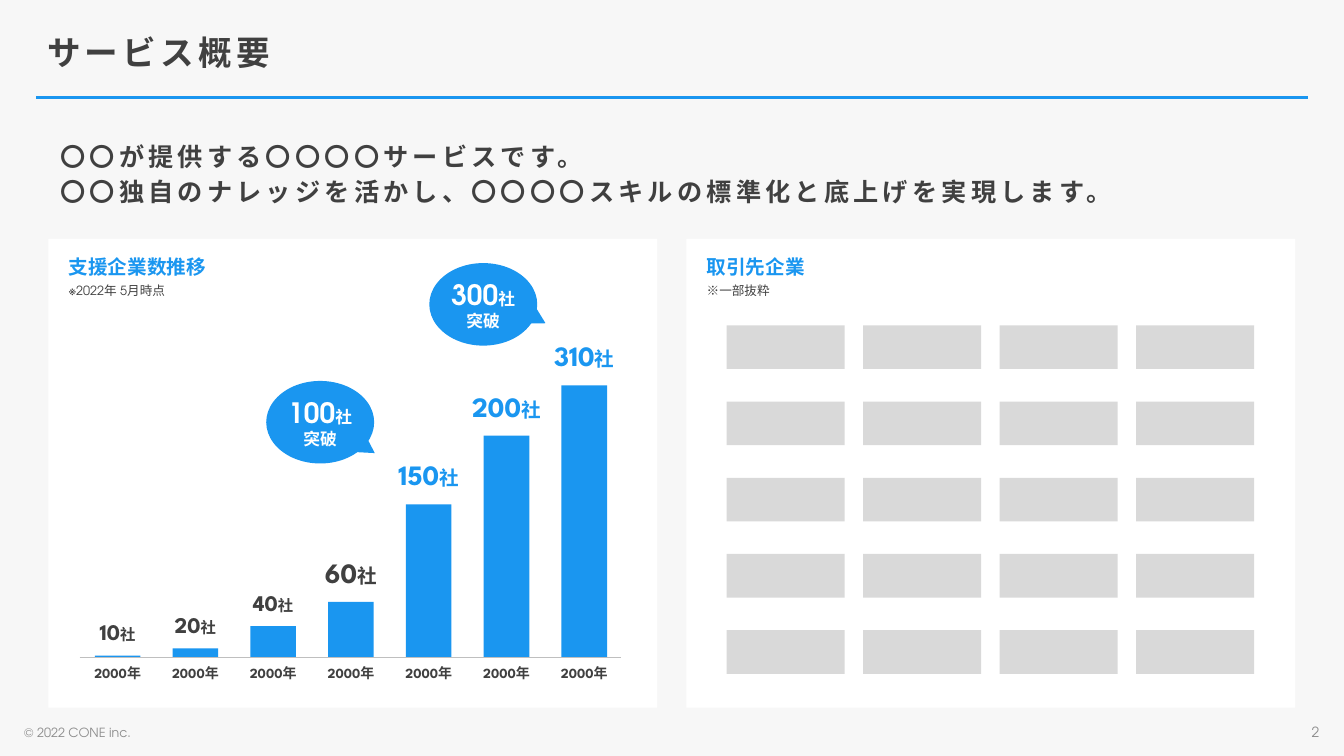
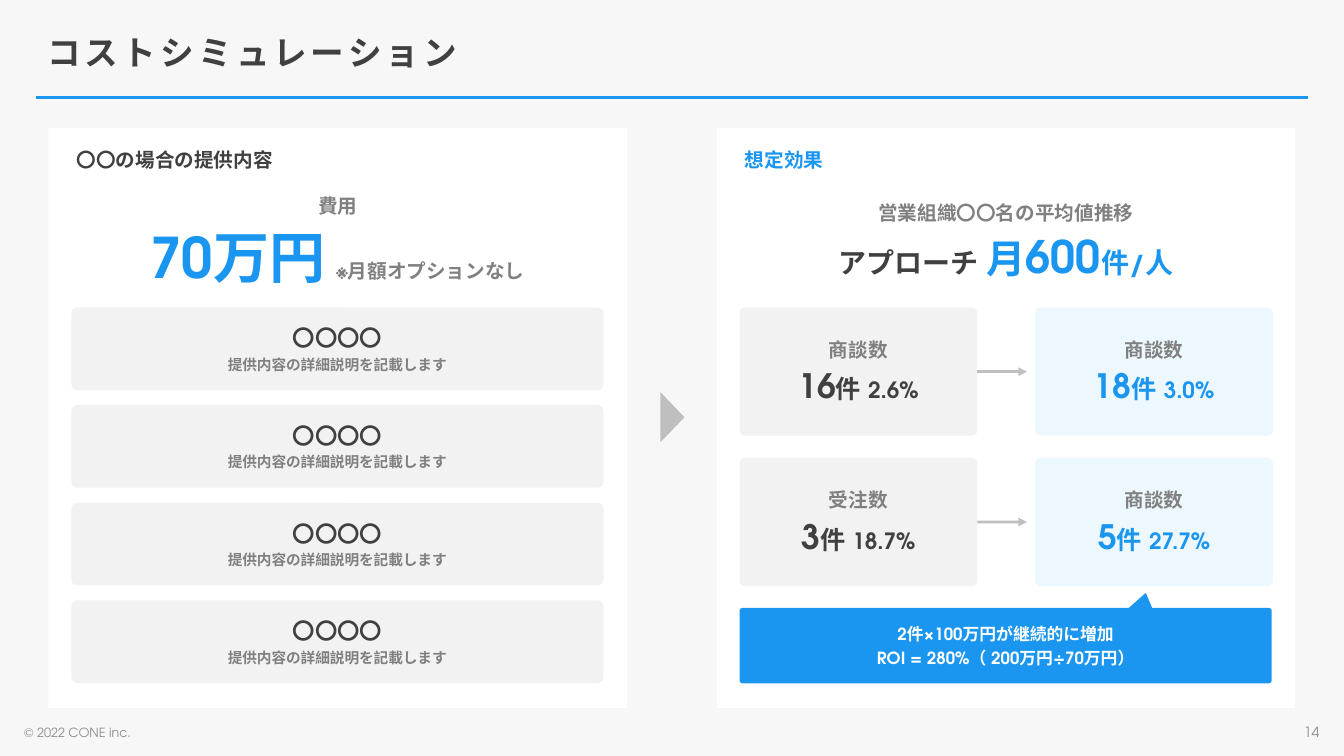
import pptx
import pptx.util
import pptx.dml.color
import pptx.enum.shapes
import pptx.enum.text
import pptx.oxml.ns
import lxml.etree

Cm = pptx.util.Cm
Pt = pptx.util.Pt
SHAPE = pptx.enum.shapes.MSO_SHAPE
ALIGN = pptx.enum.text.PP_ALIGN
ANCHOR = pptx.enum.text.MSO_ANCHOR
qn = pptx.oxml.ns.qn

BLUE, PALE_BLUE, WHITE = "1A96F0", "EDF7FE", "FFFFFF"
INK, GRAY, FOOTER_GRAY = "404040", "808080", "8C8C8C"
ARROW_GRAY, LOGO_GRAY, CARD_GRAY, BACKGROUND = "BFBFBF", "D9D9D9", "F2F2F2", "F7F7F7"
MAIN_FONT, JAPANESE_FONT, NUMBER_FONT = "TeX Gyre Adventor", "Noto Sans CJK JP", "League Spartan"

PLAIN_INSETS = (0.25, 0.13, 0.25, 0.13)
CARD_INSETS = (0.25, 0.2, 0.25, 0.2)
CHART_PANEL_INSETS = (0.51, 0.41, 0.25, 0.13)
COST_PANEL_INSETS = (0.71, 0.51, 0.25, 0)

COPYRIGHT = "© 2022 CONE inc."
LEAD = [
    "〇〇が提供する〇〇〇〇サービスです。",
    "〇〇独自のナレッジを活かし、〇〇〇〇スキルの標準化と底上げを実現します。",
]
OVERVIEW_PANELS = [
    (1.22, "支援企業数推移", "※2022年 5月時点", MAIN_FONT),
    (17.3, "取引先企業", "※一部抜粋", JAPANESE_FONT),
]
BARS = [
    ("10", 0.05, 16, 11, INK),
    ("20", 0.23, 16, 11, INK),
    ("40", 0.79, 16, 11, INK),
    ("60", 1.4, 20, 14, INK),
    ("150", 3.86, 20, 14, BLUE),
    ("200", 5.59, 20, 14, BLUE),
    ("310", 6.86, 20, 14, BLUE),
]
YEAR = "2000年"
BUBBLES = [
    ("100", 6.71, 9.6, 8.74, 10.87, 122.7),
    ("300", 10.82, 6.63, 13.03, 7.62, 118.7),
]
LOGO_ROWS, LOGO_COLUMNS = 5, 4

COST_PANELS = [
    (1.22, "〇〇の場合の提供内容", INK, [
        [("費用", 14, GRAY)],
        [("70万円", 40, BLUE), (" ", 28, BLUE), ("※月額オプションなし", 14, GRAY)],
    ]),
    (18.06, "想定効果", BLUE, [
        [("営業組織〇〇名の平均値推移", 14, GRAY)],
        [("アプローチ ", 20, INK), ("月", 28, BLUE), ("600", 32, BLUE), ("件/人", 20, BLUE)],
    ]),
]
OFFERS = [("〇〇〇〇", "提供内容の詳細説明を記載します")] * 4
METRICS = [
    [("商談数", "16", "2.6%"), ("商談数", "18", "3.0%")],
    [("受注数", "3", "18.7%"), ("商談数", "5", "27.7%")],
]
METRIC_STYLES = [(18.64, CARD_GRAY, INK), (26.09, PALE_BLUE, BLUE)]
RESULT = ["2件×100万円が継続的に増加", "ROI = 280%（ 200万円÷70万円）"]


def color(value):
    return pptx.dml.color.RGBColor.from_string(value)


def write(box, lines, font=MAIN_FONT, bold=True, align=ALIGN.CENTER, anchor=ANCHOR.MIDDLE,
          insets=PLAIN_INSETS, wrap=True, before=0, leading=None, tracking=0):
    frame = box.text_frame
    frame.word_wrap = wrap
    frame.vertical_anchor = anchor
    frame.margin_left, frame.margin_top, frame.margin_right, frame.margin_bottom = map(Cm, insets)
    for index, line in enumerate(lines):
        para = frame.add_paragraph() if index else frame.paragraphs[0]
        para.alignment = align
        if index:
            para.space_before = Pt(before)
        if leading:
            para.line_spacing = leading
        for text, size, ink, *special in line:
            span = para.add_run()
            span.text = text
            name, weight = special or (font, bold)
            span.font.size = Pt(size)
            span.font.bold = weight
            span.font.color.rgb = color(ink)
            span.font.name = name
            properties = span.font._element
            east_asian = JAPANESE_FONT if name == JAPANESE_FONT else MAIN_FONT
            lxml.etree.SubElement(properties, qn("a:ea")).set("typeface", east_asian)
            if tracking:
                properties.set("spc", str(tracking * 100))


def add_text(page, left, top, width, height, lines, **style):
    box = page.shapes.add_textbox(Cm(left), Cm(top), Cm(width), Cm(height))
    write(box, lines, **style)


def add_block(page, left, top, width, height, fill, kind=SHAPE.RECTANGLE, adjust=None, turn=0):
    block = page.shapes.add_shape(kind, Cm(left), Cm(top), Cm(width), Cm(height))
    block.shadow.inherit = False
    block.fill.solid()
    block.fill.fore_color.rgb = color(fill)
    block.line.fill.background()
    block.rotation = turn
    if adjust is not None:
        block.adjustments[0] = adjust
    return block


def add_card(page, left, top, width, height, fill, lines, adjust):
    card = add_block(page, left, top, width, height, fill, SHAPE.ROUNDED_RECTANGLE, adjust)
    write(card, lines, insets=CARD_INSETS, before=3)
    return card


def add_line(page, left, right, y, ink, weight, arrow=False):
    line = page.shapes.add_connector(
        pptx.enum.shapes.MSO_CONNECTOR.STRAIGHT, Cm(left), Cm(y), Cm(right), Cm(y))
    line.line.color.rgb = color(ink)
    line.line.width = Pt(weight)
    if arrow:
        lxml.etree.SubElement(line.line._get_or_add_ln(), qn("a:tailEnd")).set("type", "triangle")
    lxml.etree.SubElement(line._element.spPr, qn("a:effectLst"))
    return line


def add_page(deck, title, number):
    page = deck.slides.add_slide(deck.slide_layouts[6])
    page.background.fill.solid()
    page.background.fill.fore_color.rgb = color(BACKGROUND)
    add_line(page, 0.91, 32.97, 2.46, BLUE, 2)
    add_text(page, 0.94, 0.53, 31.8, 1.6, [[(title, 24, INK)]], align=ALIGN.LEFT,
             insets=(0.25, 0.2, 0.25, 0.13), leading=0.9, tracking=3)
    for left, text, size, align in [(0.36, COPYRIGHT, 9, ALIGN.LEFT),
                                    (25.88, number, 10, ALIGN.RIGHT)]:
        add_text(page, left, 18.11, 7.62, 0.69, [[(text, size, FOOTER_GRAY)]],
                 bold=False, align=align)
    return page


def draw_growth(page):
    first, pitch, width, baseline = 2.39, 1.96, 1.15, 16.57
    label_width, year_width = 2.4, 1.68
    for index, (count, height, size, unit_size, ink) in enumerate(BARS):
        left = first + index * pitch
        center = left + width / 2
        top = baseline - height
        label_height = 1.5 if size == 20 else 1.19
        add_block(page, left, top, width, height, BLUE)
        add_text(page, center - label_width / 2, top - label_height, label_width, label_height,
                 [[(count, size, ink), ("社", unit_size, ink)]], font=NUMBER_FONT, wrap=False)
        add_text(page, center - year_width / 2, baseline, year_width, 0.79,
                 [[(YEAR, 10, INK)]], font=NUMBER_FONT)
    add_line(page, 2.01, 15.65, baseline, ARROW_GRAY, 1)
    for count, left, top, tail_left, tail_top, turn in BUBBLES:
        bubble = add_block(page, left, top, 2.72, 2.08, BLUE, SHAPE.OVAL)
        write(bubble, [[(count, 20, WHITE), ("社", 12, WHITE)], [("突破", 12, WHITE)]], wrap=False)
        add_block(page, tail_left, tail_top, 0.81, 0.71, BLUE, SHAPE.ISOSCELES_TRIANGLE, turn=turn)


def draw_overview(deck):
    page = add_page(deck, "サービス概要", "2")
    add_text(page, 1.27, 3.23, 31.32, 2.31, [[(text, 18, INK)] for text in LEAD],
             align=ALIGN.LEFT, anchor=ANCHOR.TOP, insets=(0.25, 0.41, 0.25, 0.13),
             before=6, leading=0.9, tracking=3)
    for left, heading, note, note_font in OVERVIEW_PANELS:
        panel = add_block(page, left, 6.02, 15.34, 11.81, WHITE)
        write(panel, [[(heading, 14, BLUE, JAPANESE_FONT, True)], [(note, 9, INK, note_font, False)]],
              align=ALIGN.LEFT, anchor=ANCHOR.TOP, insets=CHART_PANEL_INSETS, before=3)
    for row in range(LOGO_ROWS):
        for column in range(LOGO_COLUMNS):
            add_block(page, 18.31 + column * 3.44, 8.2 + row * 1.92, 2.98, 1.1, LOGO_GRAY)
    draw_growth(page)


def draw_cost(deck):
    page = add_page(deck, "コストシミュレーション", "14")
    cards_top, full_width = 7.75, 13.41
    for left, heading, ink, headline in COST_PANELS:
        panel = add_block(page, left, 3.23, 14.58, 14.61, WHITE)
        write(panel, [[(heading, 14, ink)]], align=ALIGN.LEFT, anchor=ANCHOR.TOP,
              insets=COST_PANEL_INSETS)
        add_text(page, left, 4.75, 14.58, 2.69, headline, insets=CARD_INSETS, before=3)
    for index, (name, detail) in enumerate(OFFERS):
        add_card(page, 1.8, cards_top + index * 2.46, full_width, 2.08, CARD_GRAY,
                 [[(name, 16, INK)], [(detail, 10.5, GRAY)]], 0.07)
    add_block(page, 16.31, 10.21, 1.27, 0.61, ARROW_GRAY, SHAPE.ISOSCELES_TRIANGLE, turn=90)
    for row, pair in enumerate(METRICS):
        top, height = cards_top + row * 3.79, 3.23
        cards = []
        for (label, count, rate), (left, fill, ink) in zip(pair, METRIC_STYLES):
            lines = [[(label, 14, GRAY)], [(count, 24, ink), ("件 ", 18, ink), (rate, 16, ink)]]
            cards.append(add_card(page, left, top, 5.99, height, fill, lines, 0.04))
        arrow = add_line(page, 24.63, 25.88, top + height / 2, ARROW_GRAY, 2, arrow=True)
        arrow.begin_connect(cards[0], 3)
    add_card(page, 18.64, 15.32, full_width, 1.9, BLUE,
             [[(text, 12, WHITE)] for text in RESULT], 0.04)
    add_block(page, 28.3, 14.94, 0.79, 0.51, BLUE, SHAPE.ISOSCELES_TRIANGLE, 0.73)


def main():
    deck = pptx.Presentation()
    deck.slide_width, deck.slide_height = Cm(33.87), Cm(19.05)
    draw_overview(deck)
    draw_cost(deck)
    deck.save("out.pptx")


if __name__ == "__main__":
    main()
